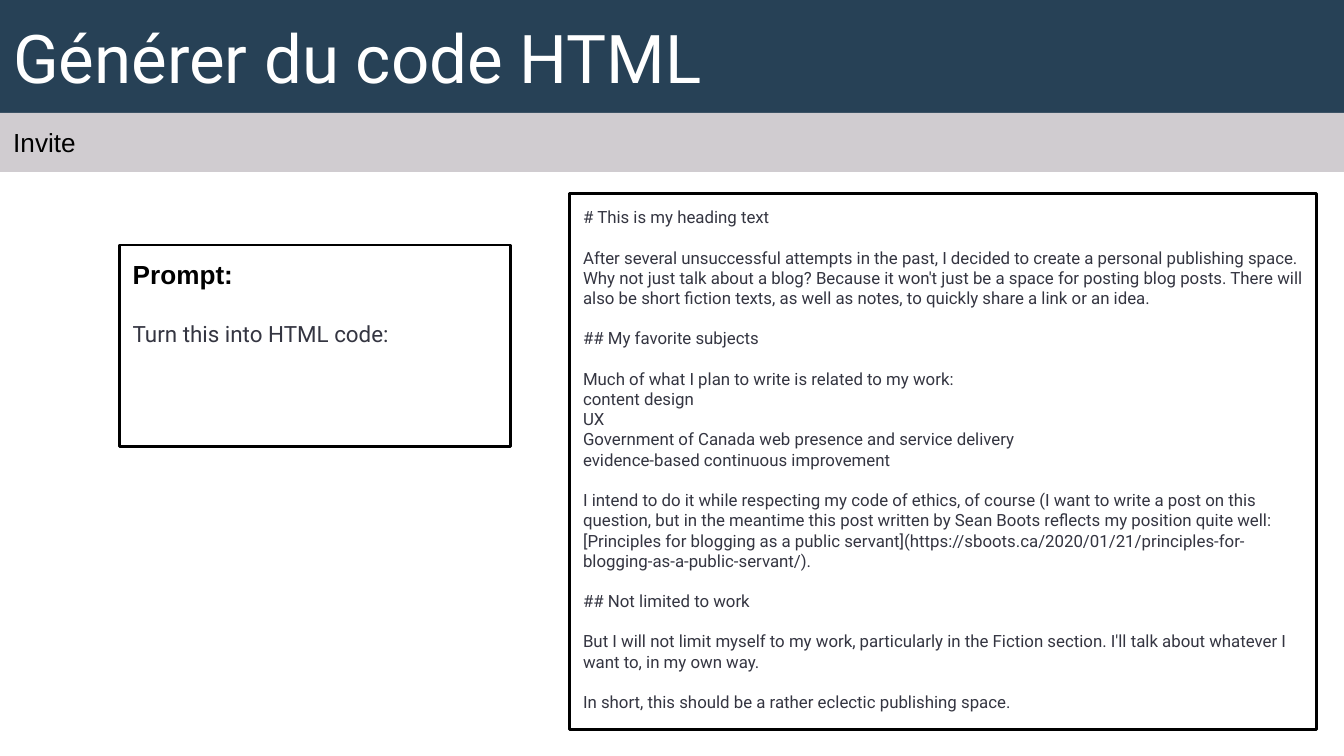
from dataclasses import dataclass
from typing import Optional

import pptx
import pptx.dml.color
import pptx.enum.shapes
import pptx.enum.text
import pptx.util

Pt = pptx.util.Pt
RGBColor = pptx.dml.color.RGBColor
Anchor = pptx.enum.text.MSO_ANCHOR

NAVY = RGBColor(0x27, 0x41, 0x56)
GREY = RGBColor(0xD0, 0xCC, 0xD0)
INK = RGBColor(0x34, 0x35, 0x41)
BLACK = RGBColor(0, 0, 0)
WHITE = RGBColor(255, 255, 255)

PAGE_WIDTH, PAGE_HEIGHT = 720, 405
TITLE_HEIGHT = 60.5
INSET = 7.2
BODY_GAP = 10.8


@dataclass
class Line:
    text: str
    size: float = 9
    font: str = "Roboto"
    color: RGBColor = INK
    bold: bool = False
    gap: float = 0


@dataclass
class Panel:
    left: float
    top: float
    width: float
    height: float
    lines: list[Line]
    fill: Optional[RGBColor] = None
    outline: Optional[RGBColor] = None
    anchor: Anchor = Anchor.TOP


BODY_BLOCKS = [
    ["# This is my heading text"],
    ["After several unsuccessful attempts in the past, I decided to create a personal "
     "publishing space. Why not just talk about a blog? Because it won't just be a space "
     "for posting blog posts. There will also be short fiction texts, as well as notes, "
     "to quickly share a link or an idea."],
    ["## My favorite subjects"],
    ["Much of what I plan to write is related to my work:",
     "content design",
     "UX",
     "Government of Canada web presence and service delivery",
     "evidence-based continuous improvement"],
    ["I intend to do it while respecting my code of ethics, of course (I want to write a "
     "post on this question, but in the meantime this post written by Sean Boots reflects "
     "my position quite well: [Principles for blogging as a public servant]"
     "(https://sboots.ca/2020/01/21/principles-for-blogging-as-a-public-servant/)."],
    ["## Not limited to work"],
    ["But I will not limit myself to my work, particularly in the Fiction section. "
     "I'll talk about whatever I want to, in my own way."],
    ["In short, this should be a rather eclectic publishing space."],
]


def body_lines(blocks: list[list[str]]) -> list[Line]:
    return [
        Line(text, gap=BODY_GAP if block_index and not line_index else 0)
        for block_index, block in enumerate(blocks)
        for line_index, text in enumerate(block)
    ]


PANELS = [
    Panel(0, 0, PAGE_WIDTH, TITLE_HEIGHT,
          [Line("Générer du code HTML", 36, color=WHITE)],
          fill=NAVY, anchor=Anchor.MIDDLE),
    Panel(0, TITLE_HEIGHT, PAGE_WIDTH, 31.7,
          [Line("Invite", 14, "Arial", BLACK)], fill=GREY),
    Panel(64, 131.3, 209.5, 108,
          [Line("Prompt:", 14, "Arial", BLACK, bold=True),
           Line("Turn this into HTML code:", 12, gap=16.4)], outline=BLACK),
    Panel(305.3, 103.7, 399.9, 287.3, body_lines(BODY_BLOCKS), outline=BLACK),
]


def write_line(para, line: Line) -> None:
    para.alignment = pptx.enum.text.PP_ALIGN.LEFT
    para.space_before = Pt(line.gap)
    span = para.add_run()
    span.text = line.text
    span.font.name = line.font
    span.font.size = Pt(line.size)
    span.font.bold = line.bold
    span.font.color.rgb = line.color


def draw_panel(page, panel: Panel) -> None:
    box = page.shapes.add_shape(
        pptx.enum.shapes.MSO_SHAPE.RECTANGLE,
        Pt(panel.left), Pt(panel.top), Pt(panel.width), Pt(panel.height))
    box.shadow.inherit = False
    if panel.fill is None:
        box.fill.background()
    else:
        box.fill.solid()
        box.fill.fore_color.rgb = panel.fill
    if panel.outline is None:
        box.line.fill.background()
    else:
        box.line.color.rgb = panel.outline
        box.line.width = Pt(1.5)
    frame = box.text_frame
    frame.word_wrap = True
    frame.vertical_anchor = panel.anchor
    frame.margin_left = frame.margin_right = Pt(INSET)
    frame.margin_top = frame.margin_bottom = Pt(INSET)
    for index, line in enumerate(panel.lines):
        write_line(frame.add_paragraph() if index else frame.paragraphs[0], line)


def main() -> None:
    deck = pptx.Presentation()
    deck.slide_width, deck.slide_height = Pt(PAGE_WIDTH), Pt(PAGE_HEIGHT)
    page = deck.slides.add_slide(deck.slide_layouts[6])
    for panel in PANELS:
        draw_panel(page, panel)
    deck.save("out.pptx")


if __name__ == "__main__":
    main()
